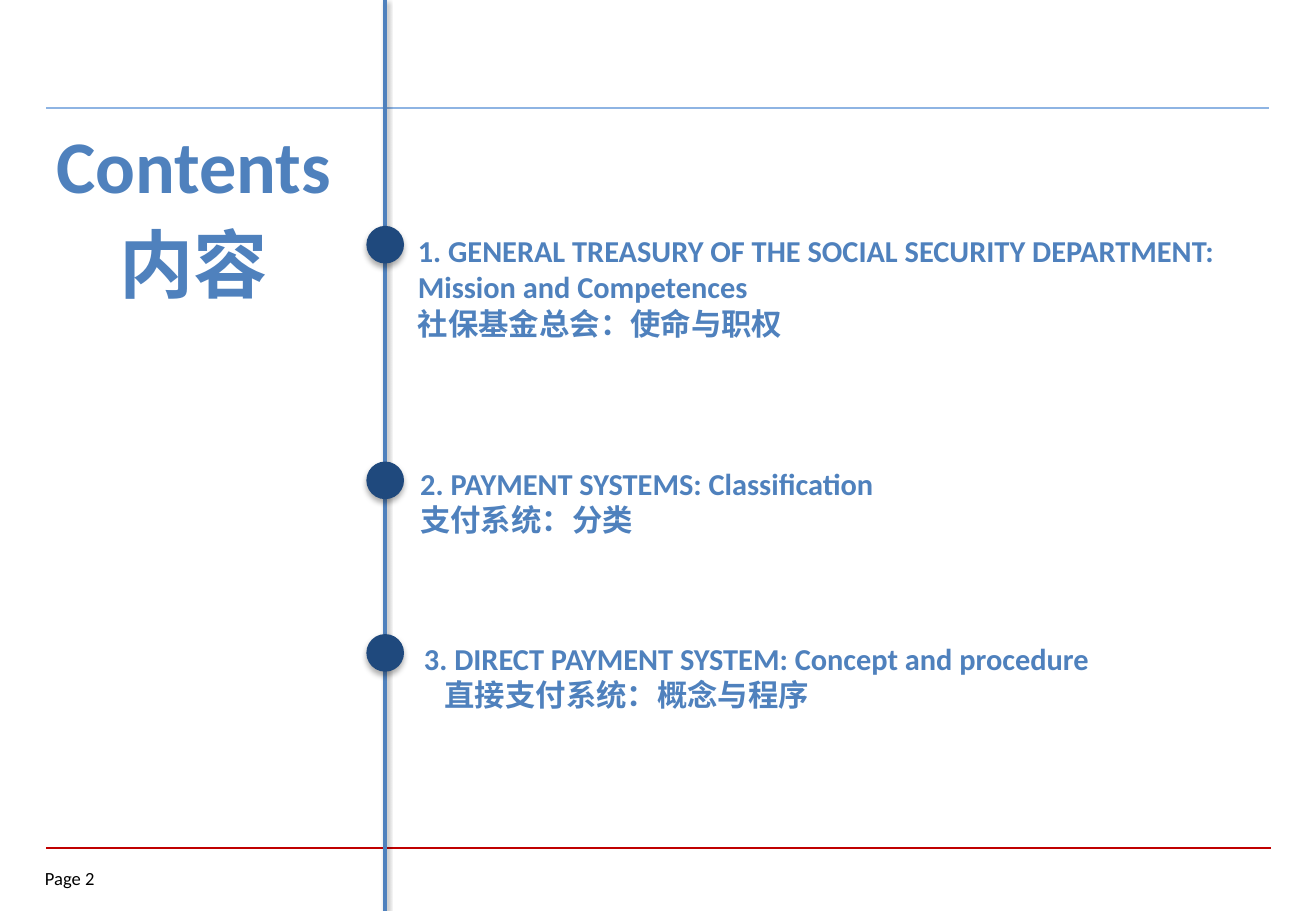
from dataclasses import dataclass

from lxml.etree import SubElement
from pptx import Presentation
from pptx.dml.color import RGBColor as Rgb
from pptx.enum.shapes import MSO_CONNECTOR as Connector, MSO_SHAPE as Shape
from pptx.enum.text import MSO_AUTO_SIZE as AutoSize, PP_ALIGN as Align
from pptx.oxml.ns import qn
from pptx.util import Emu, Inches, Pt


@dataclass(frozen=True)
class Theme:
    font: str = "Calibri"
    accent: str = "4F81BD"
    marker: str = "1F497D"
    top_rule: str = "8EB4E3"
    bottom_rule: str = "C00000"
    text: str = "000000"
    shadow: str = "000000"
    title_size: int = 44
    item_size: int = 18
    page_size: int = 11


class ContentsSlide:
    def __init__(self, slide, theme):
        self.shapes = slide.shapes
        self.theme = theme

    def cast_shadow(self, effects, opacity, blur, distance):
        """Fill an effect list with a soft shadow falling straight down."""
        shadow = SubElement(effects, qn("a:outerShdw"), blurRad=str(Pt(blur)),
                            dist=str(Pt(distance)), dir="5400000", rotWithShape="0")
        color = SubElement(shadow, qn("a:srgbClr"), val=self.theme.shadow)
        SubElement(color, qn("a:alpha"), val=str(opacity * 1000))

    def line(self, start, end, color, width):
        """Draw a line and return its effect list, which is empty."""
        line = self.shapes.add_connector(
            Connector.STRAIGHT, *(Inches(v) for v in (*start, *end)))
        line.line.color.rgb = Rgb.from_string(color)
        line.line.width = Pt(width)
        return SubElement(line._element.spPr, qn("a:effectLst"))

    def marker(self, center_x, top, size=0.31):
        dot = self.shapes.add_shape(
            Shape.OVAL, Inches(center_x - size / 2), Inches(top), Inches(size), Inches(size))
        dot.shadow.inherit = False
        dot.fill.solid()
        dot.fill.fore_color.rgb = Rgb.from_string(self.theme.marker)
        dot.line.fill.background()
        self.cast_shadow(dot._element.spPr.find(qn("a:effectLst")), 32, 3.5, 2.2)

    def text(self, box, lines, size, color, bold=True, align=Align.LEFT,
             gap=0, indent=0, inset=None):
        """Write one paragraph per line; gap and indent apply after the first."""
        frame = self.shapes.add_textbox(*(Inches(v) for v in box)).text_frame
        frame.word_wrap = True
        if inset is None:
            frame.auto_size = AutoSize.SHAPE_TO_FIT_TEXT
        else:
            frame.margin_left = frame.margin_right = Inches(inset)
            frame.margin_top = frame.margin_bottom = Inches(inset)
        for index, line in enumerate(lines):
            paragraph = frame.add_paragraph() if index else frame.paragraphs[0]
            paragraph.alignment = align
            if index and gap:
                paragraph.space_before = Pt(gap)
            if index and indent:
                paragraph._p.get_or_add_pPr().set("marL", str(Inches(indent)))
            run = paragraph.add_run()
            run.text = line
            run.font.name = self.theme.font
            run.font.size = Pt(size)
            run.font.bold = bold
            run.font.color.rgb = Rgb.from_string(color)


WIDTH, HEIGHT = 10.83, 7.5
TIMELINE_X = 3.17

# marker top, text box, indent of the Chinese line, wording
ITEMS = [
    (1.86, (3.34, 1.86, 7.03, 1.31), 0,
     ["1. GENERAL TREASURY OF THE SOCIAL SECURITY DEPARTMENT: Mission and Competences",
      "社保基金总会：使命与职权"]),
    (3.8, (3.36, 3.78, 6.54, 0.71), 0,
     ["2. PAYMENT SYSTEMS: Classification", "支付系统：分类"]),
    (5.22, (3.39, 5.22, 6.98, 0.71), 0.17,
     ["3. DIRECT PAYMENT SYSTEM: Concept and procedure", "直接支付系统：概念与程序"]),
]


def main():
    deck = Presentation()
    deck.slide_width, deck.slide_height = Inches(WIDTH), Inches(HEIGHT)
    theme = Theme()
    contents = ContentsSlide(deck.slides.add_slide(deck.slide_layouts[6]), theme)

    contents.line((0.38, 6.98), (10.46, 6.98), theme.bottom_rule, 1)
    contents.line((0.38, 0.89), (10.44, 0.89), theme.top_rule, 1.5)
    contents.text((0.37, 7.14, 0.73, 0.22), ["Page 2"], theme.page_size, theme.text,
                  bold=False, inset=0)
    contents.text((0.07, 0.93, 3.05, 1.67), ["Contents", "内容"], theme.title_size,
                  theme.accent, align=Align.CENTER, gap=6)

    timeline_effects = contents.line((TIMELINE_X, 0), (TIMELINE_X, HEIGHT), theme.accent, 2)
    contents.cast_shadow(timeline_effects, 38, 3.1, 1.6)
    for marker_top, box, indent, wording in ITEMS:
        contents.marker(TIMELINE_X, marker_top)
        contents.text(box, wording, theme.item_size, theme.accent, indent=indent)

    deck.save("out.pptx")


if __name__ == "__main__":
    main()
